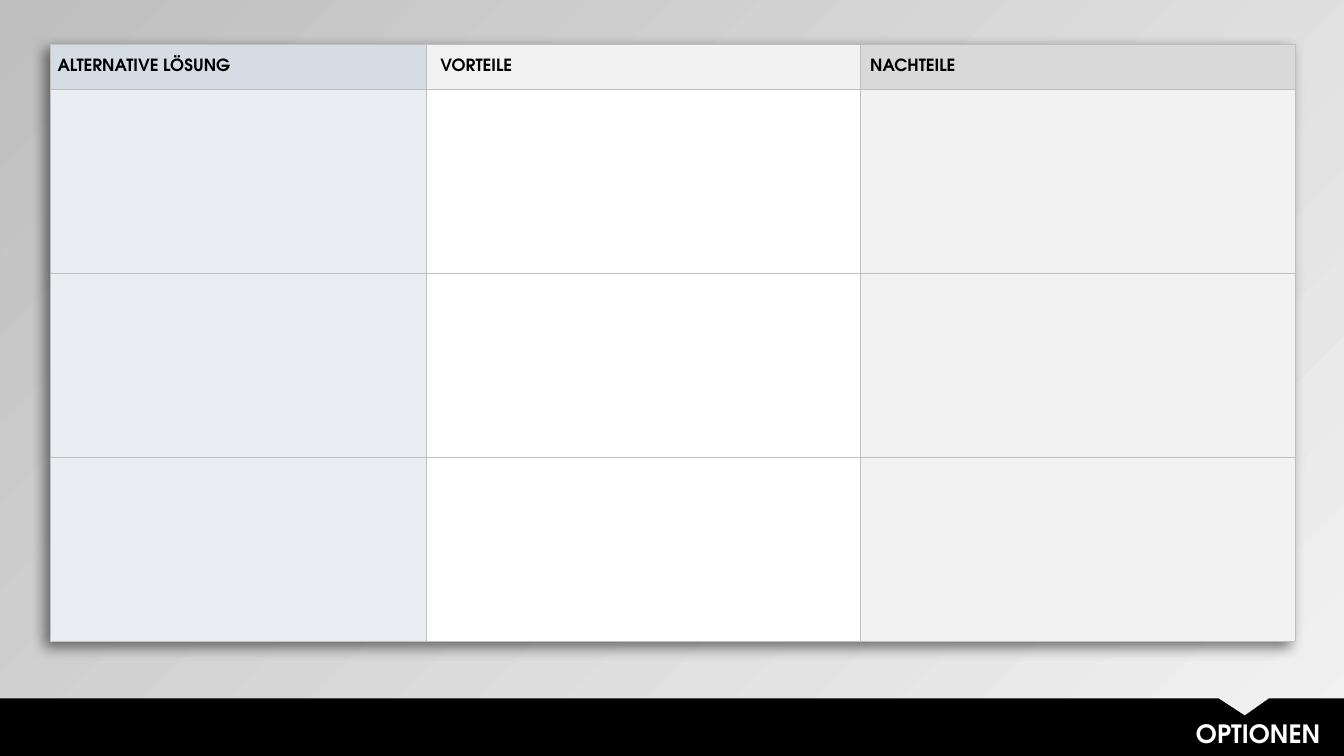
"""Build a slide comparing alternative solutions with their pros and cons."""
from dataclasses import dataclass

from lxml import etree
from pptx import Presentation, slide as s, table as t
from pptx import util as u
from pptx.dml.color import RGBColor
from pptx.enum import text
from pptx.oxml import ns
from pptx.text import text as tx

FONT = "TeX Gyre Adventor"
BLACK = RGBColor(0x00, 0x00, 0x00)
WHITE = RGBColor(0xFF, 0xFF, 0xFF)
LIGHT_GREY = RGBColor(0xF2, 0xF2, 0xF2)
MID_GREY = RGBColor(0xD9, 0xD9, 0xD9)
DARK_GREY = RGBColor(0xBF, 0xBF, 0xBF)
BLUE_GREY = RGBColor(0xD6, 0xDC, 0xE4)
PALE_BLUE = RGBColor(0xEA, 0xEE, 0xF3)

SLIDE_WIDTH, SLIDE_HEIGHT = u.Cm(33.87), u.Cm(19.05)
HEADER_HEIGHT, BODY_HEIGHT = u.Cm(1.14), u.Cm(4.63)
BODY_ROWS = 3


@dataclass(frozen=True)
class Column:
    heading: str
    width: u.Length
    indent: u.Length
    header_fill: RGBColor
    body_fill: RGBColor


COLUMNS = [
    Column("ALTERNATIVE LÖSUNG", u.Cm(9.47), u.Cm(0.18), BLUE_GREY, PALE_BLUE),
    Column("VORTEILE", u.Cm(10.95), u.Cm(0.36), LIGHT_GREY, WHITE),
    Column("NACHTEILE", u.Cm(10.95), u.Cm(0.24), MID_GREY, LIGHT_GREY),
]


def format_runs(paragraph: tx._Paragraph, size: int, color: RGBColor) -> None:
    """Apply the bold slide font to every run."""
    for run in paragraph.runs:
        run.font.name = FONT
        run.font.size = u.Pt(size)
        run.font.bold = True
        run.font.color.rgb = color


def paint_background(slide: s.Slide) -> None:
    """Fill the background with a diagonal grey gradient."""
    fill = slide.background.fill
    fill.gradient()
    fill.gradient_angle = 135
    for stop, color in zip(fill.gradient_stops, (LIGHT_GREY, DARK_GREY)):
        stop.color.rgb = color


def style_cell(cell: t._Cell, color: RGBColor) -> None:
    """Give a cell thin grey borders and a solid fill."""
    properties = cell._tc.get_or_add_tcPr()
    for side in ("lnL", "lnR", "lnT", "lnB"):
        line = etree.SubElement(properties, ns.qn(f"a:{side}"), w=str(u.Pt(0.5)))
        solid = etree.SubElement(line, ns.qn("a:solidFill"))
        etree.SubElement(solid, ns.qn("a:srgbClr"), val=str(DARK_GREY))
    cell.fill.solid()
    cell.fill.fore_color.rgb = color


def add_table_shadow(table: t.Table) -> None:
    """Cast a soft shadow to the lower left of the table."""
    effects = etree.Element(ns.qn("a:effectLst"))
    shadow = etree.SubElement(
        effects, ns.qn("a:outerShdw"), blurRad=str(u.Cm(0.35)),
        dist=str(u.Cm(0.18)), dir="8100000", algn="tr", rotWithShape="0")
    color = etree.SubElement(shadow, ns.qn("a:srgbClr"), val=str(BLACK))
    etree.SubElement(color, ns.qn("a:alpha"), val="50000")
    table._tbl.tblPr.insert(0, effects)


def add_options_table(slide: s.Slide) -> None:
    """Add the table with one row for each alternative."""
    table = slide.shapes.add_table(
        BODY_ROWS + 1, len(COLUMNS), u.Cm(1.27), u.Cm(1.12),
        sum(column.width for column in COLUMNS),
        HEADER_HEIGHT + BODY_ROWS * BODY_HEIGHT).table
    add_table_shadow(table)
    for index, row in enumerate(table.rows):
        row.height = BODY_HEIGHT if index else HEADER_HEIGHT
    for index, column in enumerate(COLUMNS):
        table.columns[index].width = column.width
        for row in range(BODY_ROWS + 1):
            style_cell(table.cell(row, index),
                       column.body_fill if row else column.header_fill)
        header = table.cell(0, index)
        header.margin_left, header.margin_right = column.indent, u.Cm(0.05)
        header.margin_top = header.margin_bottom = 0
        header.vertical_anchor = text.MSO_ANCHOR.MIDDLE
        header.text_frame.text = column.heading
        format_runs(header.text_frame.paragraphs[0], 12, BLACK)


def add_footer(slide: s.Slide) -> None:
    """Add the black band with its notch above the title."""
    top = u.Cm(17.6)
    builder = slide.shapes.build_freeform(0, top)
    builder.add_line_segments([
        (u.Cm(30.71), top), (u.Cm(31.37), u.Cm(18.03)), (u.Cm(31.98), top),
        (SLIDE_WIDTH, top), (SLIDE_WIDTH, SLIDE_HEIGHT), (0, SLIDE_HEIGHT)])
    band = builder.convert_to_shape()
    band.shadow.inherit = False
    band.fill.solid()
    band.fill.fore_color.rgb = BLACK
    band.line.fill.background()


def place_title(slide: s.Slide) -> None:
    """Set the title at the right of the band, in front of it."""
    title = slide.shapes.title
    title.left, title.top = u.Cm(10.52), u.Cm(17.98)
    title.width, title.height = u.Cm(23.01), u.Cm(1.02)
    frame = title.text_frame
    frame.text = "OPTIONEN"
    frame.word_wrap = True
    frame.auto_size = text.MSO_AUTO_SIZE.NONE
    frame.vertical_anchor = text.MSO_ANCHOR.MIDDLE
    frame.paragraphs[0].alignment = text.PP_ALIGN.RIGHT
    format_runs(frame.paragraphs[0], 18, WHITE)
    slide.shapes._spTree.append(title._element)


def main() -> None:
    """Build and save the presentation."""
    presentation = Presentation()
    presentation.slide_width, presentation.slide_height = SLIDE_WIDTH, SLIDE_HEIGHT
    slide = presentation.slides.add_slide(presentation.slide_layouts[5])
    paint_background(slide)
    add_options_table(slide)
    add_footer(slide)
    place_title(slide)
    presentation.save("out.pptx")


if __name__ == "__main__":
    main()
